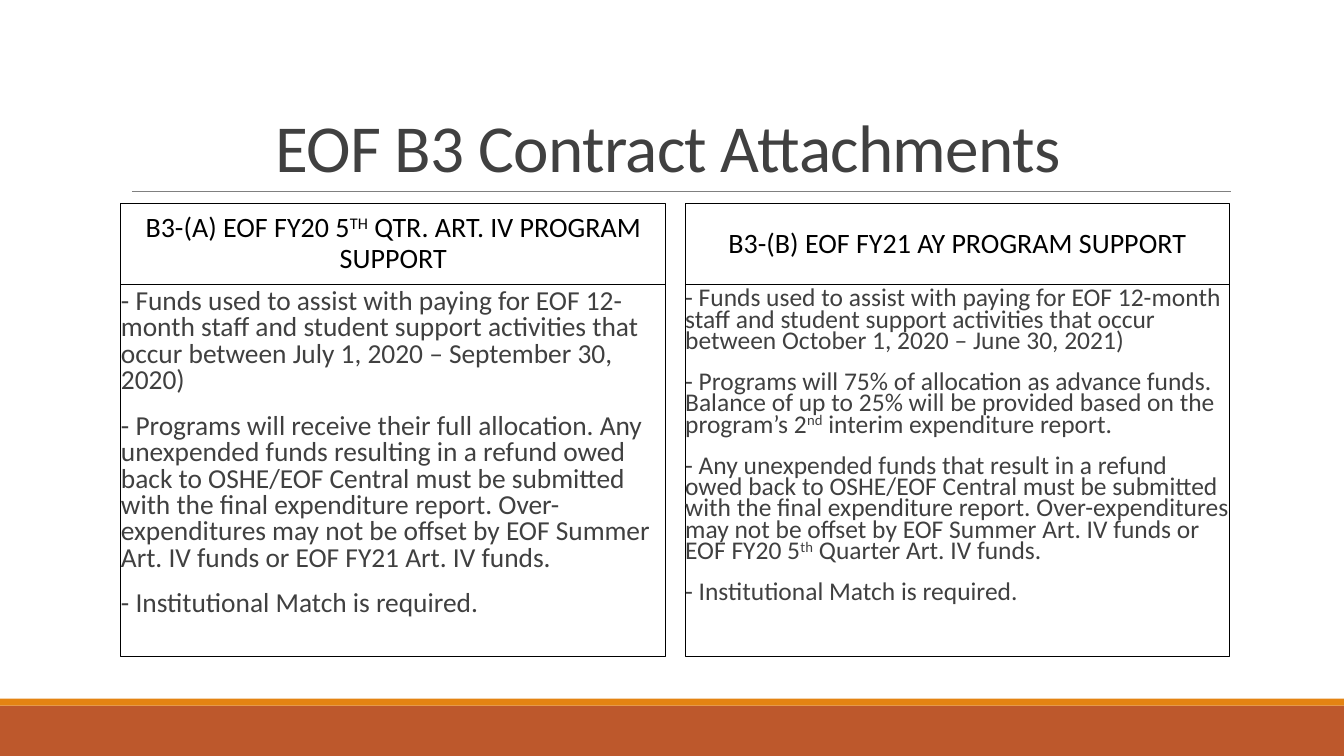
from dataclasses import dataclass

from lxml import etree
from pptx import Presentation
from pptx.dml.color import RGBColor
from pptx.enum import shapes, text
from pptx.oxml.ns import qn
from pptx.util import Pt

COLORS = {
    "rust": "BD582C",
    "orange": "E48312",
    "rule": "808080",
    "border": "000000",
    "heading": "000000",
    "body": "404040",
}
FONT = "Calibri"
PAGE_WIDTH, PAGE_HEIGHT = 960, 540
COLUMN_WIDTH = 389
HEADING_TOP, HEADING_HEIGHT = 145.3, 58
BODY_TOP, BODY_HEIGHT = 203.3, 266


@dataclass
class Band:
    top: float
    height: float
    color: str


@dataclass
class Column:
    left: float
    heading: str
    items: list[str]
    size: float
    line_spacing: float


BANDS = [Band(504, 36, "rust"), Band(499, 5, "orange")]

# A caret opens and closes a superscript
COLUMNS = [
    Column(86.4, "B3-(A) EOF FY20 5^TH^ QTR. ART. IV PROGRAM SUPPORT", [
        "- Funds used to assist with paying for EOF 12-month staff and student "
        "support activities that occur between July 1, 2020 – September 30, 2020)",
        "- Programs will receive their full allocation. Any unexpended funds "
        "resulting in a refund owed back to OSHE/EOF Central must be submitted "
        "with the final expenditure report. Over-expenditures may not be offset "
        "by EOF Summer Art. IV funds or EOF FY21 Art. IV funds.",
        "- Institutional Match is required.",
    ], 19.6, 0.8),
    Column(489.4, "B3-(B) EOF FY21 AY PROGRAM SUPPORT", [
        "- Funds used to assist with paying for EOF 12-month staff and student "
        "support activities that occur between October 1, 2020 – June 30, 2021)",
        "- Programs will 75% of allocation as advance funds. Balance of up to 25% "
        "will be provided based on the program’s 2^nd^ interim expenditure report.",
        "- Any unexpended funds that result in a refund owed back to OSHE/EOF "
        "Central must be submitted with the final expenditure report. "
        "Over-expenditures may not be offset by EOF Summer Art. IV funds or "
        "EOF FY20 5^th^ Quarter Art. IV funds.",
        "- Institutional Match is required.",
    ], 18.2, 0.7),
]


def rgb(name: str) -> RGBColor:
    return RGBColor.from_string(COLORS[name])


def add_band(page, band: Band) -> None:
    box = page.shapes.add_shape(
        shapes.MSO_SHAPE.RECTANGLE, 0, Pt(band.top), Pt(PAGE_WIDTH), Pt(band.height))
    box.shadow.inherit = False
    box.fill.solid()
    box.fill.fore_color.rgb = rgb(band.color)
    box.line.fill.background()


def add_rule(page, left: float, right: float, top: float) -> None:
    rule = page.shapes.add_connector(
        shapes.MSO_CONNECTOR.STRAIGHT, Pt(left), Pt(top), Pt(right), Pt(top))
    rule.line.color.rgb = rgb("rule")
    rule.line.width = Pt(0.5)
    etree.SubElement(rule._element.spPr, qn("a:effectLst"))


def add_title(page, wording: str) -> None:
    box = page.shapes.add_textbox(Pt(86.4), Pt(22.5), Pt(792), Pt(114.2))
    frame = box.text_frame
    frame.word_wrap = True
    frame.vertical_anchor = text.MSO_ANCHOR.BOTTOM
    frame.text = wording
    para = frame.paragraphs[0]
    para.alignment = text.PP_ALIGN.CENTER
    para.line_spacing = 0.85
    span = para.runs[0]
    span.font.name, span.font.size = FONT, Pt(48)
    span.font.color.rgb = rgb("body")
    span._r.get_or_add_rPr().set("spc", "-50")


def add_panel(page, left: float, top: float, height: float):
    box = page.shapes.add_shape(
        shapes.MSO_SHAPE.RECTANGLE, Pt(left), Pt(top), Pt(COLUMN_WIDTH), Pt(height))
    box.shadow.inherit = False
    box.fill.background()
    box.line.color.rgb = rgb("border")
    box.line.width = Pt(0.75)
    box.text_frame.word_wrap = True
    return box.text_frame


def write_para(para, wording: str, size: float, color: str,
               line_spacing: float, alignment) -> None:
    para.alignment = alignment
    para.line_spacing = line_spacing
    para.space_before, para.space_after = Pt(12), Pt(2)
    for index, part in enumerate(wording.split("^")):
        span = para.add_run()
        span.text = part
        span.font.name, span.font.size = FONT, Pt(size)
        span.font.color.rgb = rgb(color)
        if index % 2:
            span._r.get_or_add_rPr().set("baseline", "30000")


def add_column(page, column: Column) -> None:
    # Heading cell
    frame = add_panel(page, column.left, HEADING_TOP, HEADING_HEIGHT)
    frame.vertical_anchor = text.MSO_ANCHOR.MIDDLE
    write_para(frame.paragraphs[0], column.heading, 20, "heading", 0.9,
               text.PP_ALIGN.CENTER)

    # Body cell
    frame = add_panel(page, column.left, BODY_TOP, BODY_HEIGHT)
    frame.vertical_anchor = text.MSO_ANCHOR.TOP
    frame.margin_left = frame.margin_right = 0
    for index, item in enumerate(column.items):
        para = frame.add_paragraph() if index else frame.paragraphs[0]
        write_para(para, item, column.size, "body", column.line_spacing,
                   text.PP_ALIGN.LEFT)


def main() -> None:
    deck = Presentation()
    deck.slide_width, deck.slide_height = Pt(PAGE_WIDTH), Pt(PAGE_HEIGHT)
    page = deck.slides.add_slide(deck.slide_layouts[6])

    # Footer bands and title rule
    for band in BANDS:
        add_band(page, band)
    add_rule(page, 94.3, 879.1, 136.8)

    # Title and the two columns
    add_title(page, "EOF B3 Contract Attachments ")
    for column in COLUMNS:
        add_column(page, column)

    deck.save("out.pptx")


if __name__ == "__main__":
    main()
